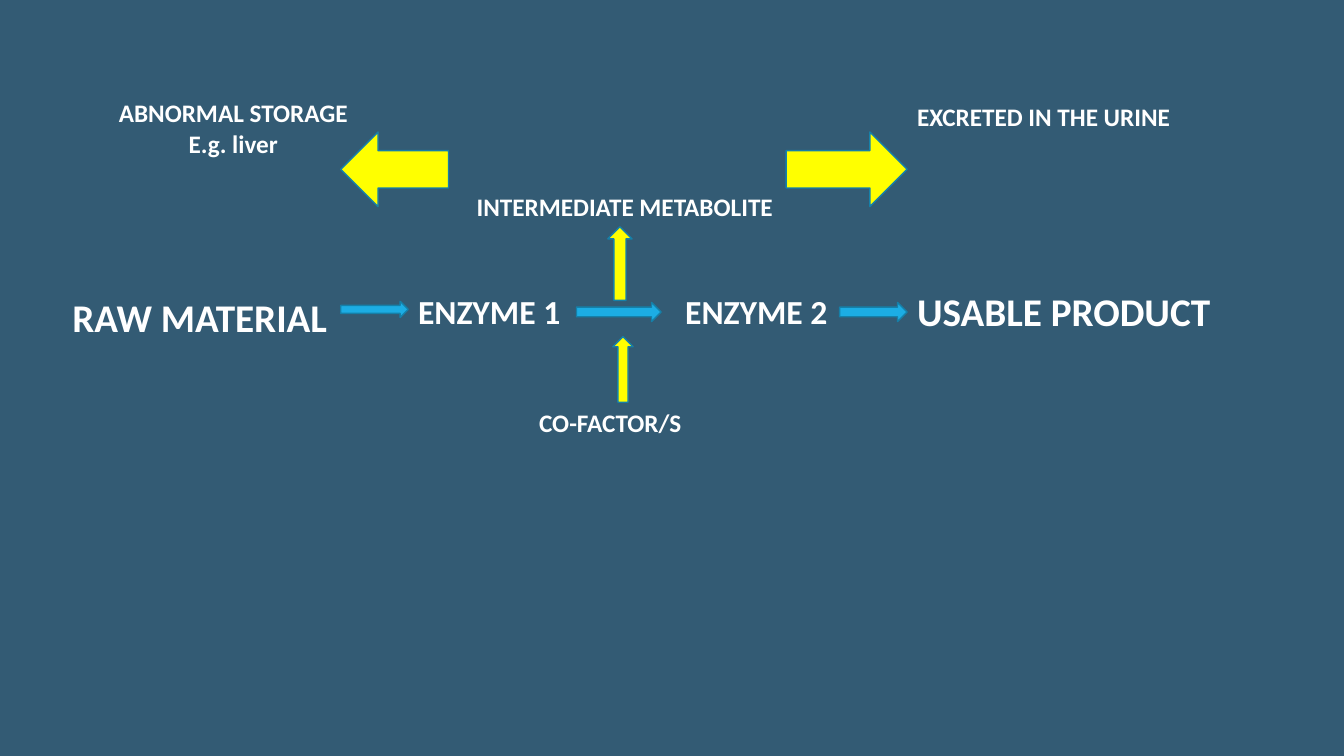
import pptx
import pptx.dml.color
import pptx.enum.shapes
import pptx.enum.text
import pptx.util

Pt = pptx.util.Pt
ARROW = pptx.enum.shapes.MSO_SHAPE
ALIGN = pptx.enum.text.PP_ALIGN

BACKGROUND = "335B74"
WHITE = "FFFFFF"
BLUE = "1CADE4"
YELLOW = "FFFF00"
OUTLINE = "1580A9"

# Text, size, left, top, width, height
PATHWAY_LABELS = [
    ("RAW MATERIAL", 28, 44.6, 205.9, 198.7, 41),
    ("USABLE PRODUCT", 28, 648, 201.6, 226.1, 41),
    ("INTERMEDIATE METABOLITE", 18, 333.4, 133.2, 228.2, 28.8),
    ("ENZYME 1", 24, 291.6, 204.5, 117.4, 36),
    ("CO-FACTOR/S", 18, 378, 287.3, 116.6, 28.8),
    ("ENZYME 2", 24, 482.4, 204.5, 117.4, 36),
    ("EXCRETED IN THE URINE", 18, 648, 69.1, 197.3, 28.8),
]

# Preset, fill, left, top, width, height
ARROWS = [
    (ARROW.RIGHT_ARROW, BLUE, 243.4, 215.3, 48.2, 11.5),
    (ARROW.RIGHT_ARROW, BLUE, 411.8, 216, 60.5, 13.7),
    (ARROW.RIGHT_ARROW, BLUE, 599.8, 216, 48.2, 13.7),
    (ARROW.UP_ARROW, YELLOW, 437.8, 240.5, 14.4, 46.8),
    (ARROW.UP_ARROW, YELLOW, 434.2, 162, 17.3, 52.6),
    (ARROW.RIGHT_ARROW, YELLOW, 561.6, 94.3, 86.4, 53.3),
    (ARROW.LEFT_ARROW, YELLOW, 243.4, 94.3, 77, 53.3),
]


def color(value):
    return pptx.dml.color.RGBColor.from_string(value)


def set_format(target, values):
    for name, value in values.items():
        setattr(target, name, value)


def add_label(page, lines, size, left, top, width, height,
              align=ALIGN.LEFT, wrap=False):
    box = page.shapes.add_textbox(Pt(left), Pt(top), Pt(width), Pt(height))
    frame = box.text_frame
    set_format(frame, {
        "word_wrap": wrap,
        "auto_size": pptx.enum.text.MSO_AUTO_SIZE.SHAPE_TO_FIT_TEXT,
    })
    for index, line in enumerate(lines):
        para = frame.add_paragraph() if index else frame.paragraphs[0]
        para.alignment = align
        span = para.add_run()
        span.text = line
        set_format(span.font, {"name": "Calibri", "size": Pt(size), "bold": True})
        span.font.color.rgb = color(WHITE)


def add_arrow(page, preset, fill, left, top, width, height):
    arrow = page.shapes.add_shape(preset, Pt(left), Pt(top), Pt(width), Pt(height))
    arrow.shadow.inherit = False
    arrow.fill.solid()
    arrow.fill.fore_color.rgb = color(fill)
    arrow.line.color.rgb = color(OUTLINE)
    arrow.line.width = Pt(1)


def main():
    deck = pptx.Presentation()
    set_format(deck, {"slide_width": Pt(960), "slide_height": Pt(540)})
    page = deck.slides.add_slide(deck.slide_layouts[6])
    page.background.fill.solid()
    page.background.fill.fore_color.rgb = color(BACKGROUND)

    # Steps and outcomes of the pathway
    for text, *layout in PATHWAY_LABELS:
        add_label(page, [text], *layout)
    add_label(page, ["ABNORMAL STORAGE", "E.g. liver"], 18, 77, 66.2, 179.3, 51.1,
              align=ALIGN.CENTER, wrap=True)

    # Blue arrows for the normal route, yellow for the side routes
    for arrow in ARROWS:
        add_arrow(page, *arrow)

    deck.save("out.pptx")


if __name__ == "__main__":
    main()
